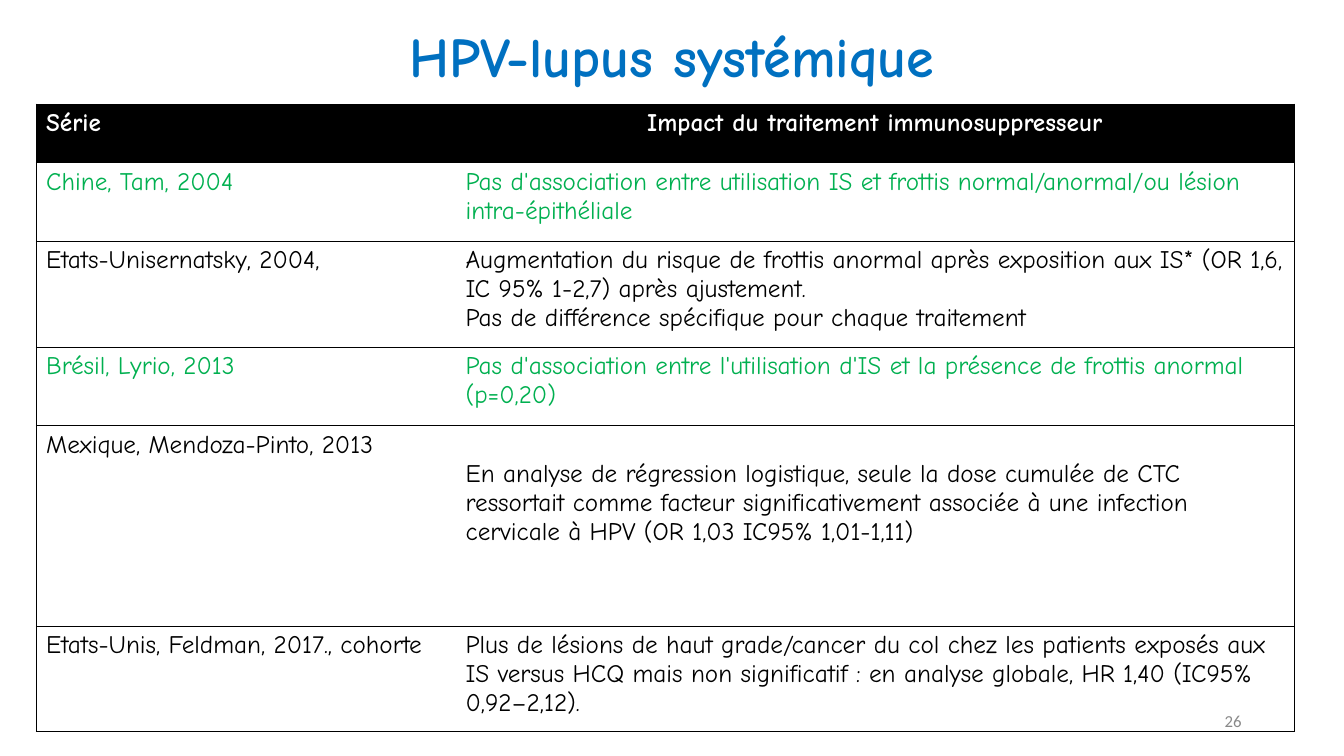
from lxml import etree
from pptx import Presentation
from pptx import util as u
from pptx.dml.color import RGBColor
from pptx.enum import text
from pptx.oxml.ns import qn

BLACK, WHITE, GREEN, BLUE, GREY = "000000", "FFFFFF", "00B050", "0070C0", "898989"
COLS = [10.57, 21.13]
HEADER = ("Série", ["Impact du traitement immunosuppresseur"])
ROWS = [
    (1.98, GREEN, "Chine, Tam, 2004",
     ["Pas d'association entre utilisation IS et frottis normal/anormal/ou lésion intra-épithéliale"]),
    (2.67, BLACK, "Etats-Unisernatsky, 2004,",
     ["Augmentation du risque de frottis anormal après exposition aux IS* (OR 1,6, IC 95% 1-2,7) "
      "après ajustement.",
      "Pas de différence spécifique pour chaque traitement"]),
    (1.98, GREEN, "Brésil, Lyrio, 2013",
     ["Pas d'association entre l'utilisation d'IS et la présence de frottis anormal (p=0,20)"]),
    (5.05, BLACK, "Mexique, Mendoza-Pinto, 2013",
     ["En analyse de régression logistique, seule la dose cumulée de CTC ressortait comme facteur "
      "significativement associée à une infection cervicale à HPV (OR 1,03 IC95% 1,01-1,11)"]),
    (2.67, BLACK, "Etats-Unis, Feldman, 2017., cohorte",
     ["Plus de lésions de haut grade/cancer du col chez les patients exposés aux IS versus HCQ mais "
      "non significatif : en analyse globale, HR 1,40 (IC95% 0,92–2,12)."]),
]


def rgb(value):
    """Turn a hex string into a colour."""
    return RGBColor.from_string(value)


def write(tf, lines, color, align=text.PP_ALIGN.LEFT, **fmt):
    """Write one formatted paragraph per line into a text frame."""
    fmt = {"name": "Comic Neue", "size": u.Pt(18), "bold": False, **fmt}
    for i, line in enumerate(lines):
        p = tf.add_paragraph() if i else tf.paragraphs[0]
        p.alignment = align
        r = p.add_run()
        r.text = line
        r.font.color.rgb = rgb(color)
        for name, value in fmt.items():
            setattr(r.font, name, value)


def place(sp, left, top, width, height):
    """Position a shape, in centimetres."""
    box = {"left": left, "top": top, "width": width, "height": height}
    for name, value in box.items():
        setattr(sp, name, u.Cm(value))


def set_borders(cell, sides):
    """Draw thin black lines on the given sides and none on the others."""
    tcPr = cell._tc.get_or_add_tcPr()
    for i, side in enumerate("LRTB"):
        ln = etree.Element(qn(f"a:ln{side}"), w=str(u.Pt(0.5)))
        if side in sides:
            fill = etree.SubElement(ln, qn("a:solidFill"))
            etree.SubElement(fill, qn("a:srgbClr"), val=BLACK)
        else:
            etree.SubElement(ln, qn("a:noFill"))
        tcPr.insert(i, ln)


def fill_cell(cell, lines, color, sides, back=WHITE, **fmt):
    """Fill, border and write a table cell."""
    cell.fill.solid()
    cell.fill.fore_color.rgb = rgb(back)
    set_borders(cell, sides)
    write(cell.text_frame, lines, color, **fmt)


def add_title(s, title):
    """Format the title placeholder."""
    place(s.shapes.title, 2.33, 0.36, 29.21, 2.26)
    tf = s.shapes.title.text_frame
    tf.auto_size = text.MSO_AUTO_SIZE.NONE
    tf.vertical_anchor = text.MSO_ANCHOR.MIDDLE
    write(tf, [title], BLUE, text.PP_ALIGN.CENTER, size=u.Pt(40), bold=True)
    tf.paragraphs[0].line_spacing = 0.9


def add_series_table(s):
    """Add the table of series and treatment impact."""
    heights = [1.47] + [row[0] for row in ROWS]
    box = [u.Cm(v) for v in (0.91, 2.62, sum(COLS), sum(heights))]
    table = s.shapes.add_table(len(heights), len(COLS), *box).table
    table.horz_banding = False
    for col, width in zip(table.columns, COLS):
        col.width = u.Cm(width)
    for row, height in zip(table.rows, heights):
        row.height = u.Cm(height)
    head = {"back": BLACK, "bold": True}
    fill_cell(table.cell(0, 0), [HEADER[0]], WHITE, "LTB", **head)
    fill_cell(table.cell(0, 1), HEADER[1], WHITE, "RTB", align=text.PP_ALIGN.CENTER, **head)
    for i, (_, color, series, impact) in enumerate(ROWS, 1):
        fill_cell(table.cell(i, 0), [series], color, "LTB")
        fill_cell(table.cell(i, 1), impact, color, "RTB")
    table.cell(4, 1).margin_top = u.Cm(0.86)


def add_page_number(s, number):
    """Add the page number at the bottom right."""
    sp = s.shapes.add_textbox(0, 0, 0, 0)
    place(sp, 23.92, 17.65, 7.62, 1.02)
    tf = sp.text_frame
    tf.word_wrap = True
    tf.vertical_anchor = text.MSO_ANCHOR.MIDDLE
    write(tf, [number], GREY, text.PP_ALIGN.RIGHT, name="Calibri", size=u.Pt(12))


def main():
    """Build and save the slide."""
    prs = Presentation()
    prs.slide_width, prs.slide_height = u.Cm(33.87), u.Cm(19.05)
    s = prs.slides.add_slide(prs.slide_layouts[5])
    add_title(s, "HPV-lupus systémique")
    add_series_table(s)
    add_page_number(s, "26")
    prs.save("out.pptx")


if __name__ == "__main__":
    main()
